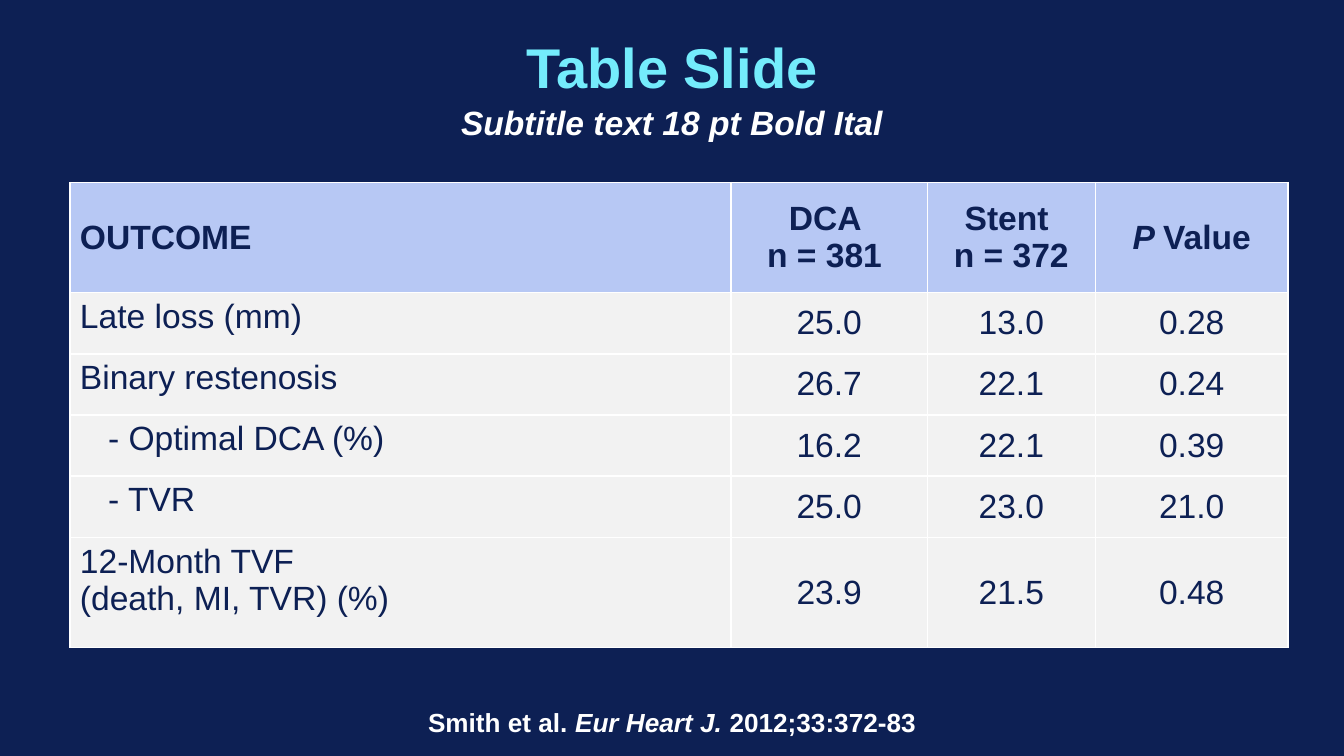
import dataclasses

import lxml.etree
import pptx
import pptx.dml.color
import pptx.enum.text
import pptx.oxml.ns
import pptx.util

ALIGN = pptx.enum.text.PP_ALIGN
ANCHOR = pptx.enum.text.MSO_ANCHOR


@dataclasses.dataclass(frozen=True)
class Theme:
    font: str = "Arial"
    navy: str = "0D2054"
    cyan: str = "74ECFC"
    white: str = "FFFFFF"
    header: str = "B7C8F4"
    body: str = "F2F2F2"
    title_size: int = 30
    text_size: int = 18
    source_size: int = 14
    border: int = 1


THEME = Theme()
SLIDE_W = pptx.util.Inches(10)
SLIDE_H = SLIDE_W * 9 // 16

COLUMN_SHARES = [49.2, 14.6, 12.5, 14.35]
ROW_SHARES = [14.55] + [8.1] * 4 + [14.6]
OUTCOMES = [
    ["OUTCOME", "DCA \nn = 381 ", "Stent \nn = 372", "P Value"],
    ["Late loss (mm)", "25.0", "13.0", "0.28"],
    ["Binary restenosis", "26.7", "22.1", "0.24"],
    ["- Optimal DCA (%)", "16.2", "22.1", "0.39"],
    ["- TVR", "25.0", "23.0", "21.0"],
    ["12-Month TVF \n(death, MI, TVR) (%)", "23.9", "21.5", "0.48"],
]


def across(percent):
    """Share of the slide's width."""
    return round(SLIDE_W * percent / 100)


def down(percent):
    """Share of the slide's height."""
    return round(SLIDE_H * percent / 100)


def rgb(color):
    return pptx.dml.color.RGBColor.from_string(color)


def format_run(r, size, color, bold=False, italic=False):
    r.font.name = THEME.font
    r.font.size = pptx.util.Pt(size)
    r.font.color.rgb = rgb(color)
    r.font.bold = bold
    r.font.italic = italic


def add_centered_text(s, top, width, height, pieces, size, color, anchor):
    """Add a bold line, centred on the slide, from (text, italic) pieces."""
    box = s.shapes.add_textbox(
        across((100 - width) / 2), down(top), across(width), down(height))
    tf = box.text_frame
    tf.word_wrap = True
    tf.vertical_anchor = anchor
    p = tf.paragraphs[0]
    p.alignment = ALIGN.CENTER
    for text, italic in pieces:
        r = p.add_run()
        r.text = text
        format_run(r, size, color, bold=True, italic=italic)
    return p


def set_borders(cell):
    tc_pr = cell._tc.get_or_add_tcPr()
    for i, side in enumerate(("lnL", "lnR", "lnT", "lnB")):
        line = lxml.etree.Element(
            pptx.oxml.ns.qn(f"a:{side}"), w=str(pptx.util.Pt(THEME.border)))
        fill = lxml.etree.SubElement(line, pptx.oxml.ns.qn("a:solidFill"))
        lxml.etree.SubElement(
            fill, pptx.oxml.ns.qn("a:srgbClr"), val=THEME.white)
        tc_pr.insert(i, line)


def fill_cell(cell, text, is_header, is_label):
    cell.fill.solid()
    cell.fill.fore_color.rgb = rgb(THEME.header if is_header else THEME.body)
    set_borders(cell)
    indent = 2.1 if text.startswith("-") else 0
    cell.margin_left = across(0.75 + indent)
    cell.margin_right = across(0.75)
    cell.margin_top = cell.margin_bottom = across(0.4)
    top_aligned = is_label and not is_header
    cell.vertical_anchor = ANCHOR.TOP if top_aligned else ANCHOR.MIDDLE
    p = cell.text_frame.paragraphs[0]
    p.alignment = ALIGN.LEFT if is_label else ALIGN.CENTER
    if text == "P Value":
        p.add_run().text = "P "
        p.add_run().text = "Value"
    else:
        p.text = text
    for r in p.runs:
        format_run(r, THEME.text_size, THEME.navy, bold=is_header,
                   italic=r.text == "P ")


def add_outcome_table(s):
    table = s.shapes.add_table(
        len(ROW_SHARES), len(COLUMN_SHARES), across(5.2), down(24.15),
        across(sum(COLUMN_SHARES)), down(sum(ROW_SHARES))).table
    table.horz_banding = False
    for column, share in zip(table.columns, COLUMN_SHARES):
        column.width = across(share)
    for row, share in zip(table.rows, ROW_SHARES):
        row.height = down(share)
    for i, values in enumerate(OUTCOMES):
        for j, text in enumerate(values):
            fill_cell(table.cell(i, j), text, i == 0, j == 0)


def main():
    prs = pptx.Presentation()
    prs.slide_width, prs.slide_height = SLIDE_W, SLIDE_H
    s = prs.slides.add_slide(prs.slide_layouts[6])
    s.background.fill.solid()
    s.background.fill.fore_color.rgb = rgb(THEME.navy)

    add_centered_text(s, 3.2, 85, 11, [("Table Slide", False)],
                      THEME.title_size, THEME.cyan, ANCHOR.MIDDLE)
    add_outcome_table(s)
    subtitle = add_centered_text(
        s, 12.3, 75, 8.5, [("Subtitle text 18 pt Bold Ital", True)],
        THEME.text_size, THEME.white, ANCHOR.MIDDLE)
    subtitle.line_spacing = 0.9
    add_centered_text(
        s, 92.6, 46.2, 9.8,
        [("Smith et al. ", False), ("Eur Heart J. ", True),
         ("2012;33:372-83", False)],
        THEME.source_size, THEME.white, ANCHOR.TOP)
    prs.save("out.pptx")


if __name__ == "__main__":
    main()
